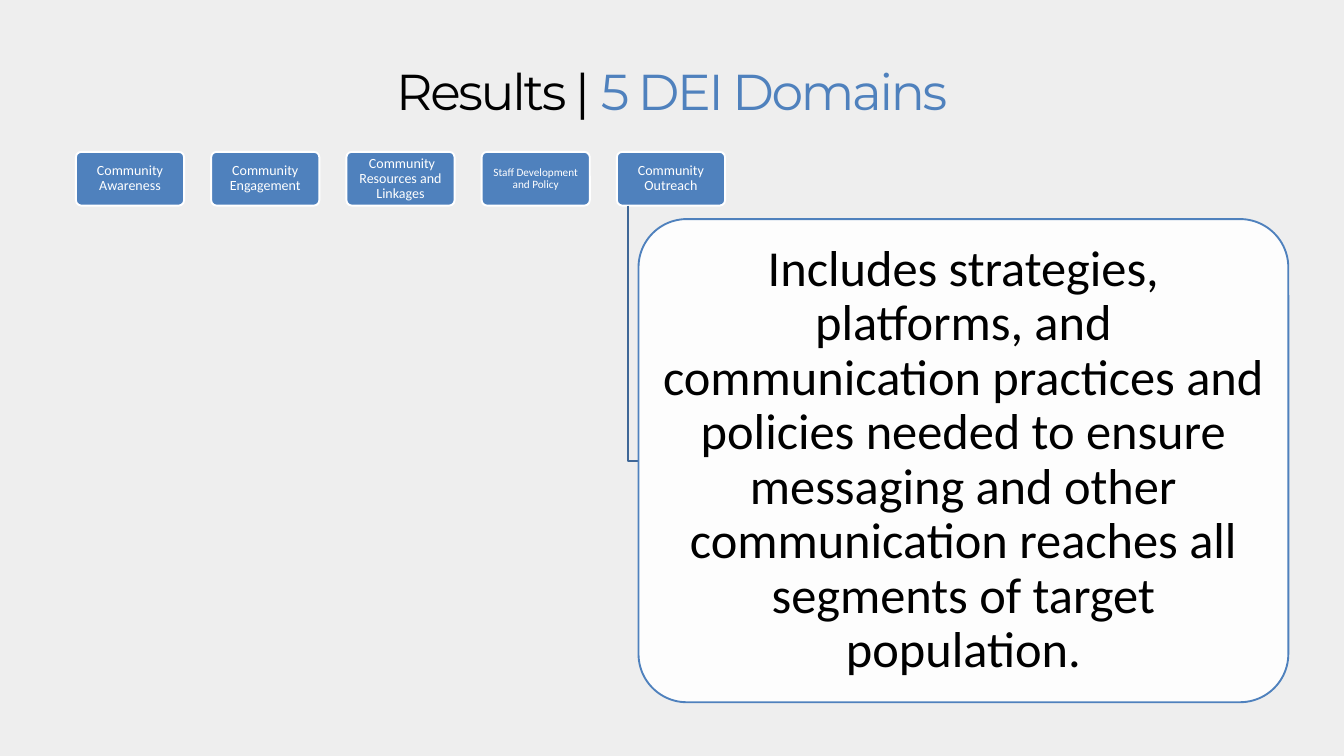
from lxml import etree
from pptx import Presentation
from pptx import util as u
from pptx.dml.color import RGBColor
from pptx.enum import shapes, text
from pptx.oxml import ns

BLUE = RGBColor(0x4F, 0x81, 0xBD)
DARK_BLUE = RGBColor(0x3F, 0x67, 0x97)
WHITE = RGBColor(0xFF, 0xFF, 0xFF)
BLACK = RGBColor(0, 0, 0)
GREY = RGBColor(0xEE, 0xEE, 0xEE)

CARD_W, CARD_H = 1.61, 0.8
PITCH = 1.25
DOMAINS = [
    ("Community Awareness", 15),
    ("Community Engagement", 15),
    (" Community Resources and Linkages", 15),
    ("Staff Development and Policy", 12),
    ("Community Outreach", 15),
]
DESCRIPTION = (
    "Includes strategies, platforms, and communication practices and policies "
    "needed to ensure messaging and other communication reaches all segments "
    "of target population."
)


def apply(target, values):
    for name, value in values.items():
        setattr(target, name, value)


def inches(box):
    return [u.Inches(value) for value in box]


def write_run(paragraph, words, font, size, color):
    run = paragraph.add_run()
    run.text = words
    apply(run.font, {"name": font, "size": u.Pt(size), "bold": False})
    run.font.color.rgb = color
    return run


def set_outline(shape, color):
    shape.shadow.inherit = False
    shape.line.color.rgb = color
    shape.line.width = u.Pt(2)


def place_title(slide, box):
    title = slide.shapes.title
    apply(title, dict(zip(("left", "top", "width", "height"), inches(box))))
    frame = title.text_frame
    apply(frame, {
        "margin_left": 0, "margin_right": 0, "margin_top": 0, "margin_bottom": 0,
        "word_wrap": True,
        "vertical_anchor": text.MSO_ANCHOR.TOP,
        "auto_size": text.MSO_AUTO_SIZE.SHAPE_TO_FIT_TEXT,
    })
    heading = frame.paragraphs[0]
    apply(heading, {"alignment": text.PP_ALIGN.CENTER, "line_spacing": u.Pt(96)})
    for words, color in (("Results | ", BLACK), ("5 DEI Domains", BLUE)):
        run = write_run(heading, words, "Montserrat", 54, color)
        run.font._element.set("spc", "-250")


def place_panel(slide, box, words, size, fill, outline, ink, margins):
    panel = slide.shapes.add_shape(shapes.MSO_SHAPE.ROUNDED_RECTANGLE, *inches(box))
    panel.adjustments[0] = 0.1
    panel.fill.solid()
    panel.fill.fore_color.rgb = fill
    set_outline(panel, outline)
    side, end = inches(margins)
    apply(panel.text_frame, {
        "margin_left": side, "margin_right": side,
        "margin_top": end, "margin_bottom": end,
        "word_wrap": True, "vertical_anchor": text.MSO_ANCHOR.MIDDLE,
    })
    paragraph = panel.text_frame.paragraphs[0]
    apply(paragraph, {"alignment": text.PP_ALIGN.CENTER, "line_spacing": 0.9})
    write_run(paragraph, words, "Calibri", size, ink)
    return panel


def place_domains(slide, left, top):
    for column, (domain, size) in enumerate(DOMAINS):
        card = (left + column * CARD_W * PITCH, top, CARD_W, CARD_H)
        place_panel(slide, card, domain, size, BLUE, WHITE, WHITE, (0.03, 0.02))
    return card


def place_description(slide, card, width, height):
    left, top = card[0] + CARD_W * 0.2, card[1] + CARD_H * PITCH
    stem, start, middle = card[0] + CARD_W * 0.1, card[1] + CARD_H, top + height / 2
    branch = slide.shapes.build_freeform(*inches((stem, start)), scale=1.0)
    branch.add_line_segments(
        [inches((stem, middle)), inches((left, middle))], close=False)
    elbow = branch.convert_to_shape()
    elbow.fill.background()
    set_outline(elbow, DARK_BLUE)

    panel = place_panel(slide, (left, top, width, height), DESCRIPTION, 54,
                        WHITE, BLUE, BLACK, (0.11, 0.07))
    fill_color = panel.fill._xPr.find(ns.qn("a:solidFill"))[0]
    etree.SubElement(fill_color, ns.qn("a:alpha"), val="90000")


def main():
    deck = Presentation()
    deck.slide_width, deck.slide_height = inches((20, 11.25))
    slide = deck.slides.add_slide(deck.slide_layouts[5])
    slide.background.fill.solid()
    slide.background.fill.fore_color.rgb = GREY
    place_title(slide, (1.12, 0.46, 17.75, 1.19))
    outreach = place_domains(slide, 1.13, 2.26)
    place_description(slide, outreach, 9.67, 7.19)
    deck.save("out.pptx")


if __name__ == "__main__":
    main()
